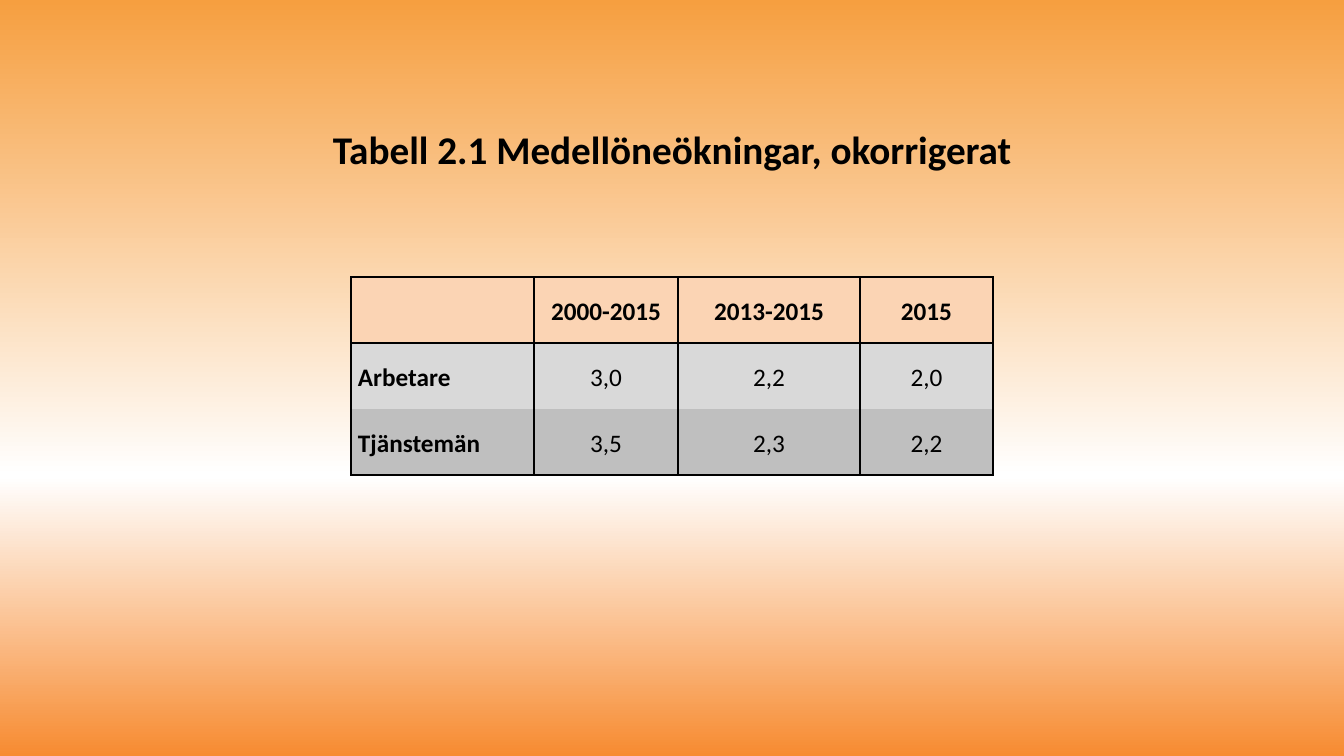
import copy

import pptx
import pptx.dml.color
import pptx.enum.text
import pptx.oxml
import pptx.oxml.ns
import pptx.util

EMU_PER_PX = 12192000 / 1344
ALIGN = pptx.enum.text.PP_ALIGN
MIDDLE = pptx.enum.text.MSO_ANCHOR.MIDDLE
BLACK = "000000"
BACKGROUND_STOPS = [(0, "F78B31"), (0.37, "FFFFFF"), (1, "F69F40")]
RAISES = [
    ["", "2000-2015", "2013-2015", "2015"],
    ["Arbetare", "3,0", "2,2", "2,0"],
    ["Tjänstemän", "3,5", "2,3", "2,2"],
]
COLUMN_WIDTHS = [183, 144, 182, 133]
ROW_HEIGHT = 66
ROW_FILLS = ["FBD4B4", "D9D9D9", "BFBFBF"]
ROW_BORDERS = ["LRTB", "LRT", "LRB"]


def px(length):
    """Turn pixels into EMU."""
    return pptx.util.Emu(round(length * EMU_PER_PX))


def color(hex_code):
    """Turn a hex string into a colour."""
    return pptx.dml.color.RGBColor.from_string(hex_code)


def format_paragraph(paragraph, size, bold, alignment):
    """Set the font and alignment of a paragraph."""
    paragraph.alignment = alignment
    paragraph.font.name = "Calibri"
    paragraph.font.size = pptx.util.Pt(size)
    paragraph.font.bold = bold
    paragraph.font.color.rgb = color(BLACK)


def paint_background(slide):
    """Fill the slide with a gradient that runs from bottom to top."""
    fill = slide.background.fill
    fill.gradient()
    fill.gradient_angle = 90
    stop_list = slide.element.xpath(".//a:gsLst")[0]
    stop_list.append(copy.deepcopy(stop_list[-1]))
    for stop, (position, hex_code) in zip(fill.gradient_stops, BACKGROUND_STOPS):
        stop.position = position
        stop.color.rgb = color(hex_code)


def add_title(slide, text):
    """Place the title, raised within its box by the bottom margin."""
    title = slide.shapes.title
    title.left, title.top, title.width, title.height = map(px, (126, 67, 1092, 210))
    frame = title.text_frame
    frame.text = text
    frame.word_wrap = True
    frame.vertical_anchor = MIDDLE
    frame.margin_top = 0
    frame.margin_bottom = px(47)
    format_paragraph(frame.paragraphs[0], 28, True, ALIGN.CENTER)


def set_borders(cell, sides):
    """Draw the given sides of a cell and clear the others."""
    properties = cell._tc.get_or_add_tcPr()
    for side in "LRTB":
        paint = (
            f'<a:solidFill><a:srgbClr val="{BLACK}"/></a:solidFill>'
            if side in sides
            else "<a:noFill/>"
        )
        properties.append(pptx.oxml.parse_xml(
            f'<a:ln{side} {pptx.oxml.ns.nsdecls("a")} w="12700">{paint}</a:ln{side}>'
        ))


def fill_cell(cell, text, row, column):
    """Write and format one table cell."""
    set_borders(cell, ROW_BORDERS[row])
    cell.fill.solid()
    cell.fill.fore_color.rgb = color(ROW_FILLS[row])
    cell.vertical_anchor = MIDDLE
    cell.margin_left = cell.margin_right = px(7)
    cell.margin_top = cell.margin_bottom = 0
    cell.text = text
    paragraph = cell.text_frame.paragraphs[0]
    paragraph.line_spacing = 1.15
    is_row_label = column == 0
    alignment = ALIGN.JUSTIFY if is_row_label else ALIGN.CENTER
    format_paragraph(paragraph, 18, row == 0 or is_row_label, alignment)


def add_raises_table(slide):
    """Add the table of average wage increases."""
    table = slide.shapes.add_table(
        len(RAISES), len(COLUMN_WIDTHS), px(351), px(277),
        px(sum(COLUMN_WIDTHS)), px(ROW_HEIGHT * len(RAISES)),
    ).table
    table.first_row = False
    table.horz_banding = False
    for column, width in zip(table.columns, COLUMN_WIDTHS):
        column.width = px(width)
    for row, texts in enumerate(RAISES):
        table.rows[row].height = px(ROW_HEIGHT)
        for column, text in enumerate(texts):
            fill_cell(table.cell(row, column), text, row, column)


def main():
    """Build and save the slide."""
    presentation = pptx.Presentation()
    presentation.slide_width = px(1344)
    presentation.slide_height = px(756)
    slide = presentation.slides.add_slide(presentation.slide_layouts[5])
    paint_background(slide)
    add_title(slide, "Tabell 2.1 Medellöneökningar, okorrigerat")
    add_raises_table(slide)
    presentation.save("out.pptx")


if __name__ == "__main__":
    main()
